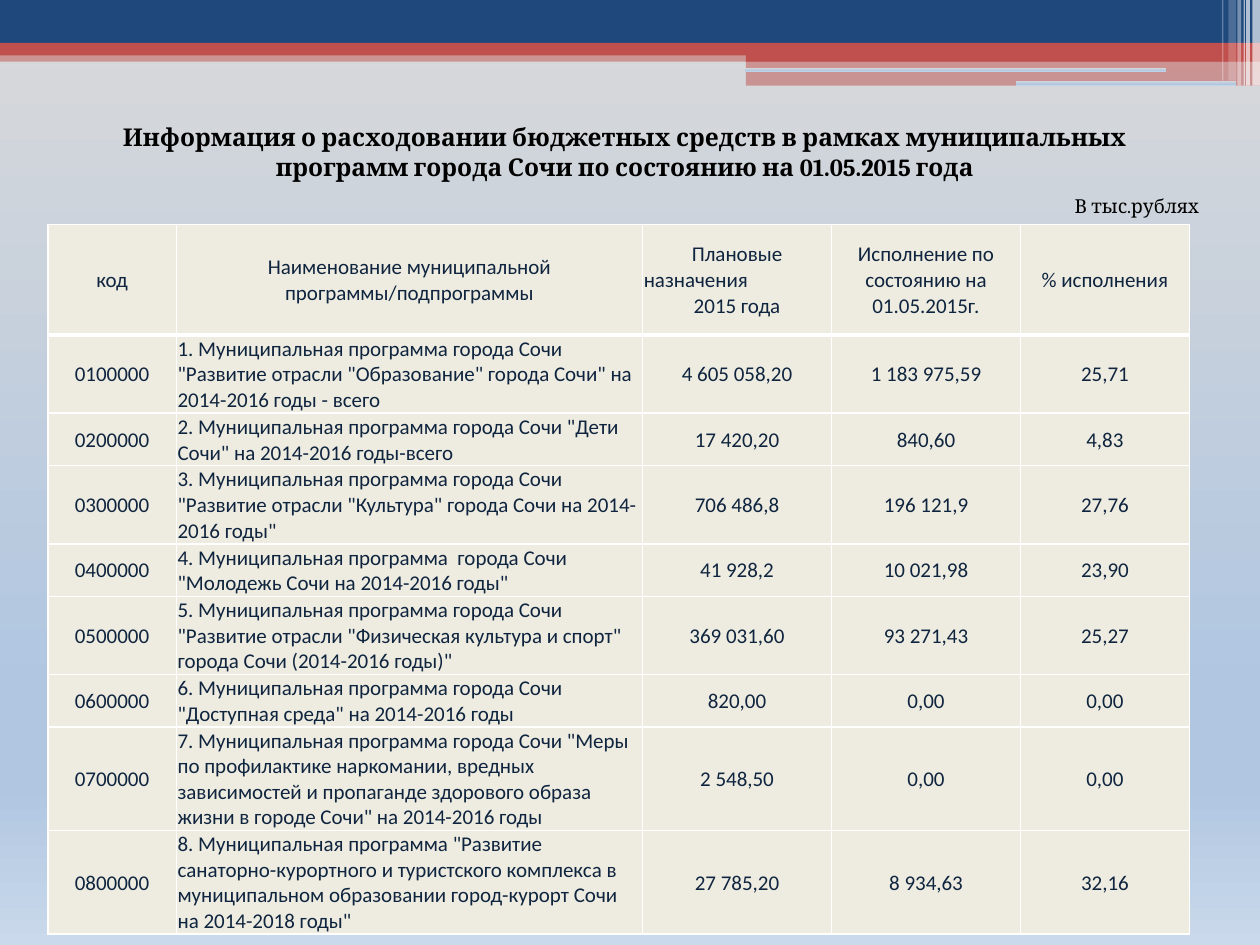
"""Builds a slide with a table of municipal programme spending in Sochi."""
from pptx import Presentation
from pptx.dml.color import RGBColor
from pptx.enum.shapes import MSO_SHAPE as Shape
from pptx.enum.text import MSO_ANCHOR as Anchor, MSO_AUTO_SIZE as AutoSize, PP_ALIGN as Align
from pptx.oxml import parse_xml
from pptx.oxml.ns import nsdecls
from pptx.util import Inches, Pt

THEME = {
    "navy": "1F497D", "red": "C0504D", "white": "FFFFFF", "black": "000000",
    "cell": "EEECE1", "ink": "0F243E",
    "gradient": [(0, "D9D9D9"), (74, "B0C6E1"), (83, "B0C6E1"), (100, "CAD9EB")],
    "heading_font": "Cambria", "table_font": "Calibri",
    "title_size": 14, "unit_size": 11, "table_size": 12,
    "border": 1, "header_border": 3,
}

TITLE = ("Информация о расходовании бюджетных средств в рамках муниципальных "
         "программ города Сочи по состоянию на 01.05.2015 года")
UNIT = "В тыс.рублях"
HEADER = ["код", "Наименование муниципальной программы/подпрограммы",
          "Плановые\nназначения\n2015 года", "Исполнение по состоянию на 01.05.2015г.",
          "% исполнения"]
PROGRAMMES = [
    (3, '1. Муниципальная программа города Сочи "Развитие отрасли "Образование" города Сочи" '
        'на 2014-2016 годы - всего', "4 605 058,20", "1 183 975,59", "25,71"),
    (2, '2. Муниципальная программа города Сочи "Дети Сочи" на 2014-2016 годы-всего',
     "17 420,20", "840,60", "4,83"),
    (3, '3. Муниципальная программа города Сочи "Развитие отрасли "Культура" города Сочи '
        'на 2014-2016 годы"', "706 486,8", "196 121,9", "27,76"),
    (2, '4. Муниципальная программа  города Сочи "Молодежь Сочи на 2014-2016 годы"',
     "41 928,2", "10 021,98", "23,90"),
    (3, '5. Муниципальная программа города Сочи "Развитие отрасли "Физическая культура и спорт" '
        'города Сочи (2014-2016 годы)"', "369 031,60", "93 271,43", "25,27"),
    (2, '6. Муниципальная программа города Сочи "Доступная среда" на 2014-2016 годы',
     "820,00", "0,00", "0,00"),
    (4, '7. Муниципальная программа города Сочи "Меры по профилактике наркомании, вредных '
        'зависимостей и пропаганде здорового образа жизни в городе Сочи" на 2014-2016 годы',
     "2 548,50", "0,00", "0,00"),
    (4, '8. Муниципальная программа "Развитие санаторно-курортного и туристского комплекса '
        'в муниципальном образовании город-курорт Сочи на 2014-2018 годы"',
     "27 785,20", "8 934,63", "32,16"),
]
COLUMNS = [1.02, 3.7, 1.5, 1.5, 1.34]
HEADER_HEIGHT, LINE_HEIGHT = 0.88, 0.205
TABLE_LEFT, TABLE_TOP = 0.38, 1.78

BANDS = [
    (0, 0.4, 10, 0.09, "red", 50),
    (0, 0, 10, 0.34, "navy", 100),
    (0, 0.34, 10, 0.1, "red", 100),
    (5.92, 0.39, 4.08, 0.1, "red", 100),
    (5.92, 0.48, 4.08, 0.2, "red", 50),
]
SLOTS = [(5.91, 0.54, 3.35, 0.03), (8.06, 0.64, 1.75, 0.04)]
STRIPES = [(9.94, 0.06, 0.68, 65), (9.89, 0.03, 0.68, 65), (9.87, 0.01, 0.68, 60),
           (9.82, 0.03, 0.68, 40), (9.75, 0.06, 0.64, 20), (9.7, 0.01, 0.64, 30)]


def color(name):
    return RGBColor.from_string(THEME[name])


def apply_gradient(fill, properties):
    fill.solid()
    stops = "".join(f'<a:gs pos="{pos * 1000}"><a:srgbClr val="{value}"/></a:gs>'
                    for pos, value in THEME["gradient"])
    gradient = parse_xml(f'<a:gradFill {nsdecls("a")} rotWithShape="1"><a:gsLst>{stops}</a:gsLst>'
                         '<a:lin ang="5400000" scaled="0"/></a:gradFill>')
    solid = properties.find(".//{*}solidFill")
    solid.getparent().replace(solid, gradient)


def add_block(slide, kind, left, top, width, height):
    block = slide.shapes.add_shape(kind, *map(Inches, (left, top, width, height)))
    block.shadow.inherit = False
    block.line.fill.background()
    return block


def add_band(slide, left, top, width, height, name, opacity):
    band = add_block(slide, Shape.RECTANGLE, left, top, width, height)
    band.fill.solid()
    band.fill.fore_color.rgb = color(name)
    if opacity < 100:
        band.fill._xPr.find(".//{*}srgbClr").append(
            parse_xml(f'<a:alpha {nsdecls("a")} val="{opacity * 1000}"/>'))


def format_text(frame, font, size, name, align, bold=False):
    for para in frame.paragraphs:
        para.alignment = align
        for span in para.runs:
            span.font.name, span.font.size, span.font.bold = font, Pt(size), bold
            span.font.color.rgb = color(name)


def set_borders(cell, bottom):
    widths = [("lnL", 1), ("lnR", 1), ("lnT", 1), ("lnB", bottom)]
    for index, (side, points) in enumerate(widths):
        cell._tc.get_or_add_tcPr().insert(index, parse_xml(
            f'<a:{side} {nsdecls("a")} w="{Pt(points)}"><a:solidFill>'
            f'<a:srgbClr val="{THEME["white"]}"/></a:solidFill></a:{side}>'))


def fill_cell(cell, text, align, bottom):
    cell.text_frame.text = text
    cell.vertical_anchor = Anchor.MIDDLE
    cell.margin_left = cell.margin_right = cell.margin_top = Inches(0.01)
    cell.margin_bottom = 0
    cell.fill.solid()
    cell.fill.fore_color.rgb = color("cell")
    set_borders(cell, bottom)
    format_text(cell.text_frame, THEME["table_font"], THEME["table_size"], "ink", align)


def add_programme_table(slide):
    rows = [HEADER] + [[f"{number:02d}00000", *values]
                       for number, (_, *values) in enumerate(PROGRAMMES, 1)]
    heights = [HEADER_HEIGHT] + [lines * LINE_HEIGHT for lines, *_ in PROGRAMMES]
    table = slide.shapes.add_table(
        len(rows), len(COLUMNS), Inches(TABLE_LEFT), Inches(TABLE_TOP),
        Inches(sum(COLUMNS)), Inches(sum(heights))).table
    table.horz_banding = False
    for column, width in zip(table.columns, COLUMNS):
        column.width = Inches(width)
    for row_index, (values, height) in enumerate(zip(rows, heights)):
        table.rows[row_index].height = Inches(height)
        bottom = THEME["border"] if row_index else THEME["header_border"]
        for column_index, text in enumerate(values):
            align = Align.LEFT if row_index and column_index == 1 else Align.CENTER
            fill_cell(table.cell(row_index, column_index), text, align, bottom)
    table.cell(0, 2).text_frame.paragraphs[1].alignment = Align.LEFT


def place_heading(box, left, top, width, height, text, size, align, bold):
    box.left, box.top, box.width, box.height = map(Inches, (left, top, width, height))
    frame = box.text_frame
    frame.text = text
    frame.word_wrap = True
    frame.auto_size = AutoSize.NONE
    frame.vertical_anchor = Anchor.TOP
    format_text(frame, THEME["heading_font"], size, "black", align, bold)


def main():
    deck = Presentation()
    deck.slide_width, deck.slide_height = Inches(10), Inches(7.5)
    page = deck.slides.add_slide(deck.slide_layouts[5])
    apply_gradient(page.background.fill, page.background._cSld)
    for band in BANDS:
        add_band(page, *band)
    for slot in SLOTS:
        block = add_block(page, Shape.ROUNDED_RECTANGLE, *slot)
        apply_gradient(block.fill, block._element.spPr)
    for left, width, height, opacity in STRIPES:
        add_band(page, left, 0, width, height, "white", opacity)
    add_programme_table(page)
    place_heading(page.shapes.title, 0.51, 0.92, 8.9, 0.57, TITLE,
                  THEME["title_size"], Align.CENTER, True)
    unit_box = page.shapes.add_textbox(0, 0, 0, 0)
    place_heading(unit_box, 8.43, 1.49, 1.57, 0.29, UNIT, THEME["unit_size"], Align.LEFT, False)
    deck.save("out.pptx")


if __name__ == "__main__":
    main()
